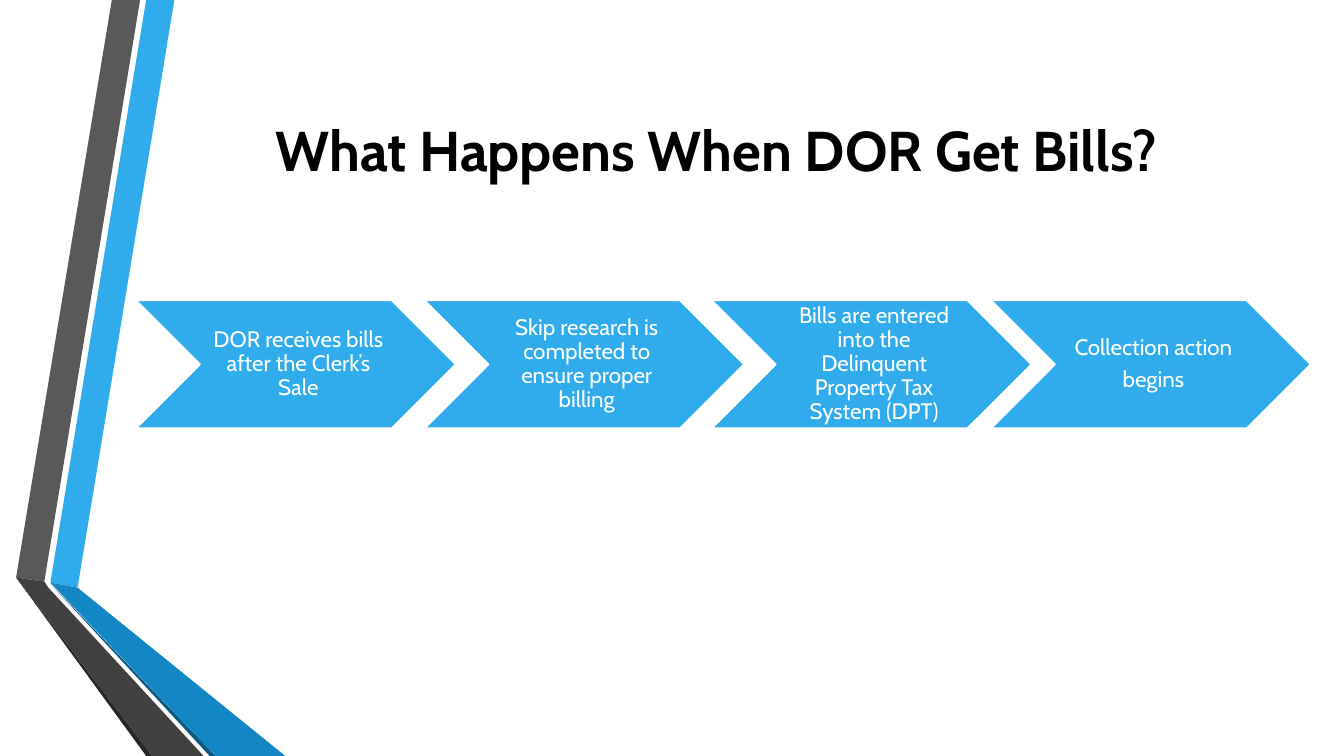
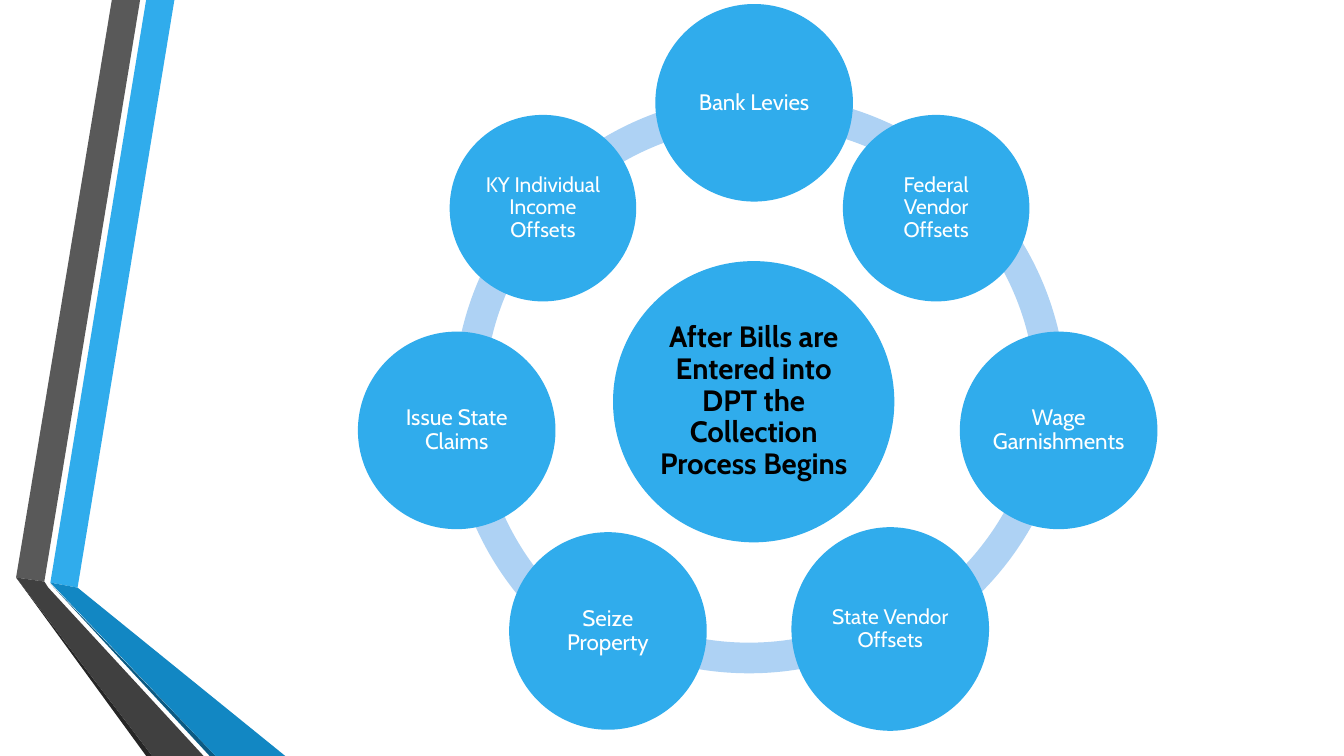
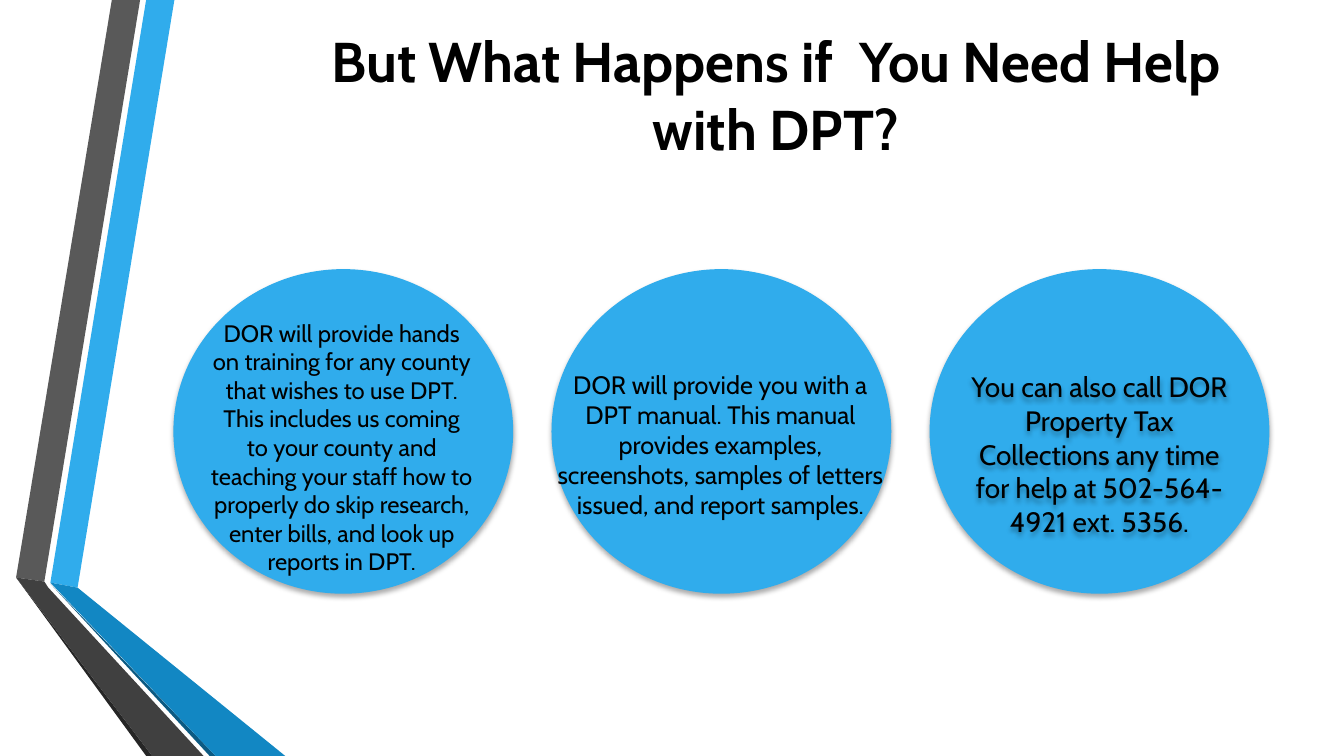
from lxml.etree import SubElement
from pptx import Presentation
from pptx.dml.color import RGBColor
from pptx.enum.shapes import MSO_SHAPE as Shape
from pptx.enum.text import MSO_ANCHOR as Anchor, PP_ALIGN as Align
from pptx.oxml.ns import qn
from pptx.util import Inches, Pt

FONT = "Cabin"
BLUE, PALE_BLUE = "30ACEC", "AED2F4"
BLACK, WHITE = "000000", "FFFFFF"

# Folded ribbons along the left edge: fill and outline points in inches
RIBBONS = [
    (BLUE, [(0.5, 5.78), (0.77, 5.83), (1.73, 0), (1.45, 0)]),
    ("595959", [(1.39, 0), (1.11, 0), (0.16, 5.73), (0.44, 5.77)]),
    ("262626", [(0.16, 5.73), (1.45, 7.5), (1.51, 7.5)]),
    ("0C5A82", [(0.5, 5.79), (2.08, 7.5), (2.14, 7.5)]),
    ("1287C3", [(0.5, 5.78), (2.14, 7.5), (2.83, 7.5), (0.77, 5.83)]),
    ("404040", [(2.02, 7.5), (0.48, 5.83), (0.44, 5.77), (0.16, 5.73), (1.51, 7.5)]),
]

STEPS = [
    (0, "DOR receives bills after the Clerk’s Sale"),
    (2.86, "Skip research is completed to ensure proper billing"),
    (5.71, "Bills are entered into the Delinquent Property Tax System (DPT)"),
    (8.48, "Collection action\nbegins"),
]

# Ring arcs: offset of the arc's box, start and end angle in degrees
ARCS = [
    (0.9, 0.9, 104.66, 161.84),
    (0.84, 0.56, 70.94, 100.67),
    (0.99, 0.65, 6.34, 72.89),
    (0.95, 0.9, 161.18, 3.35),
]

# Circles of the ring: text, offset, width, height, text size
ACTIONS = [
    ("Bank Levies", 2.95, 0, 1.96, 1.96, 16),
    ("Wage Garnishments", 5.97, 3.25, 1.96, 1.96, 16),
    ("Seize Property", 1.5, 5.24, 1.96, 1.96, 16),
    ("Issue State Claims", 0, 3.25, 1.96, 1.96, 16),
    ("Federal Vendor Offsets", 4.81, 1.1, 1.85, 1.85, 15),
    ("State Vendor Offsets", 4.3, 5.19, 1.96, 2.02, 15),
    ("KY Individual Income Offsets", 0.91, 1.1, 1.85, 1.85, 15),
]

# Help circles: text, text box offset from its circle, width, height, text size
HELP = [
    ("DOR will provide hands on training for any county that wishes to use DPT. "
     "This includes us coming to your county and teaching your staff how to "
     "properly do skip research, enter bills, and look up reports in DPT.",
     0.27, 0.44, 2.8, 2.98, 17),
    ("DOR will provide you with a DPT manual. This manual provides examples, "
     "screenshots, samples of letters issued, and report samples.",
     -0.09, 0.94, 3.53, 1.92, 18),
    ("You can also call DOR Property Tax Collections any time for help at "
     "502-564-4921 ext. 5356.",
     0.2, 0.95, 2.97, 1.8, 20),
]


def color(hex_value):
    return RGBColor.from_string(hex_value)


def paint(shape, fill):
    """Give a shape a plain fill, without outline or shadow."""
    shape.fill.solid()
    shape.fill.fore_color.rgb = color(fill)
    shape.line.fill.background()
    shape.shadow.inherit = False


def add_shape(slide, kind, left, top, width, height, fill=BLUE):
    shape = slide.shapes.add_shape(
        kind, Inches(left), Inches(top), Inches(width), Inches(height))
    paint(shape, fill)
    return shape


def write(shape, text, size, font_color, bold=False, anchor=Anchor.MIDDLE,
          spacing=1.0, insets=(0.1, 0.05, 0.1, 0.05)):
    frame = shape.text_frame
    frame.text = text
    frame.word_wrap = True
    frame.vertical_anchor = anchor
    (frame.margin_left, frame.margin_top,
     frame.margin_right, frame.margin_bottom) = map(Inches, insets)
    for index, paragraph in enumerate(frame.paragraphs):
        paragraph.alignment = Align.CENTER
        paragraph.line_spacing = spacing
        if index:
            paragraph.space_before = Pt(size * 0.35)
        for run in paragraph.runs:
            run.font.name = FONT
            run.font.size = Pt(size)
            run.font.bold = bold
            run.font.color.rgb = color(font_color)


def add_text(slide, text, left, top, width, height, size, **style):
    box = slide.shapes.add_textbox(
        Inches(left), Inches(top), Inches(width), Inches(height))
    write(box, text, size, BLACK, **style)
    return box


def add_title(slide, text, left, top, width, height):
    add_text(slide, text, left, top, width, height, 40,
             bold=True, anchor=Anchor.BOTTOM)


def add_soft_shadow(shape):
    shape.shadow.inherit = False
    effects = shape.element.find(".//" + qn("a:effectLst"))
    shadow = SubElement(effects, qn("a:outerShdw"), blurRad=str(Pt(3.5)),
                        dist=str(Pt(2.2)), dir="5400000", rotWithShape="0")
    shade = SubElement(shadow, qn("a:srgbClr"), val=BLACK)
    SubElement(shade, qn("a:alpha"), val="32000")


def add_ribbons(slide):
    for fill, points in RIBBONS:
        start, *others = [(Inches(x), Inches(y)) for x, y in points]
        builder = slide.shapes.build_freeform(*start)
        builder.add_line_segments(others)
        paint(builder.convert_to_shape(), fill)


def new_slide(presentation):
    slide = presentation.slides.add_slide(presentation.slide_layouts[6])
    add_ribbons(slide)
    return slide


def add_process(slide, left, top):
    for offset, text in STEPS:
        chevron = add_shape(slide, Shape.CHEVRON, left + offset, top, 3.17, 1.27)
        chevron.line.color.rgb = color(WHITE)
        chevron.line.width = Pt(1.25)
        write(chevron, text, 16, WHITE, spacing=0.9,
              insets=(0.07, 0.02, 0.02, 0.02))


def add_action_ring(slide, left, top):
    for x, y, start, end in ARCS:
        arc = add_shape(slide, Shape.BLOCK_ARC, left + x, top + y,
                        6.08, 6.08, PALE_BLUE)
        # Angles are stored in 60000ths of a degree, adjustments in 100000ths
        for index, value in enumerate((start * 0.6, end * 0.6, 0.05)):
            arc.adjustments[index] = value
    hub = add_shape(slide, Shape.OVAL, left + 2.53, top + 2.55, 2.79, 2.79)
    write(hub, "After Bills are Entered into DPT the Collection Process Begins",
          21, BLACK, bold=True, spacing=0.9, insets=(0.03,) * 4)
    for text, x, y, width, height, size in ACTIONS:
        circle = add_shape(slide, Shape.OVAL, left + x, top + y, width, height)
        write(circle, text, size, WHITE, spacing=0.9, insets=(0.02,) * 4)


def add_help_circles(slide, left, top, pitch):
    for index, (text, x, y, width, height, size) in enumerate(HELP):
        circle_left = left + index * pitch
        circle = add_shape(slide, Shape.OVAL, circle_left, top, 3.37, 3.22)
        add_soft_shadow(circle)
        box = add_text(slide, text, circle_left + x, top + y, width, height,
                       size, anchor=Anchor.TOP)
    # Only the phone note casts a shadow from its letters
    add_soft_shadow(box)


def main():
    presentation = Presentation()
    presentation.slide_width = Inches(13.33)
    presentation.slide_height = Inches(7.5)

    process_slide = new_slide(presentation)
    add_title(process_slide, "What Happens When DOR Get Bills?",
              2.22, 0.96, 9.77, 0.9)
    add_process(process_slide, 1.35, 2.98)

    add_action_ring(new_slide(presentation), 3.55, 0.04)

    help_slide = new_slide(presentation)
    add_title(help_slide, "But What Happens if  You Need Help with DPT?",
              2.81, 0.16, 9.77, 1.49)
    add_help_circles(help_slide, 1.72, 2.67, 3.75)

    presentation.save("out.pptx")


if __name__ == "__main__":
    main()
